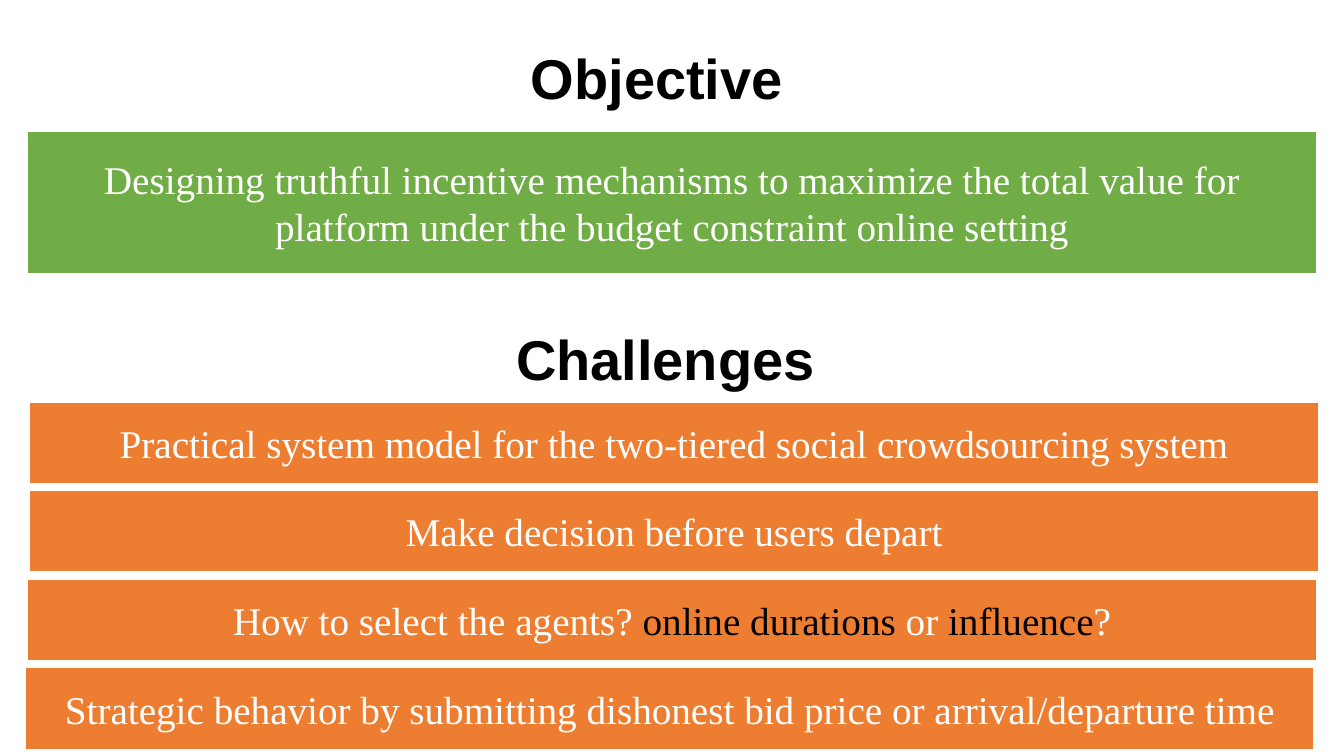
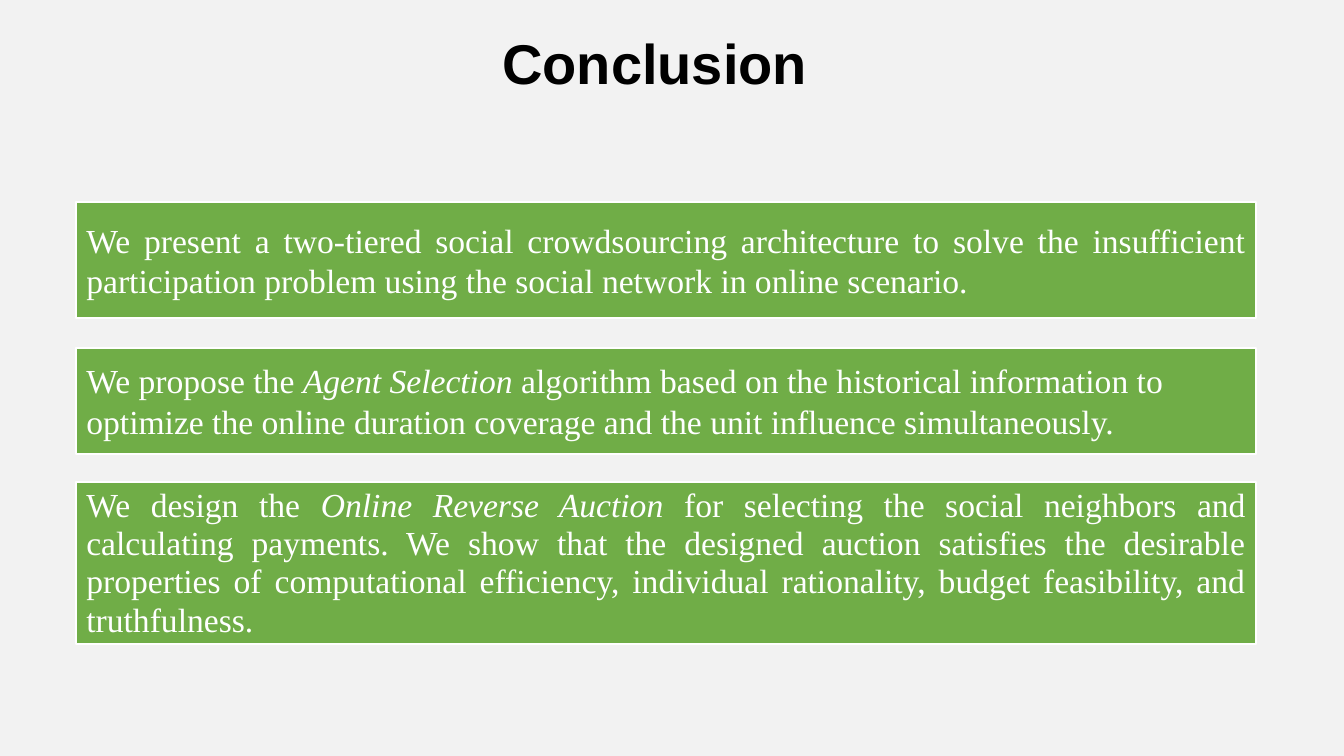
from pptx import Presentation
from pptx.dml.color import RGBColor
from pptx.enum.shapes import MSO_SHAPE
from pptx.enum.text import MSO_ANCHOR, PP_ALIGN
from pptx.util import Inches, Pt

COLS, ROWS = 160, 90
HEX = {"white": "FFFFFF", "black": "000000", "grey": "F2F2F2",
       "green": "70AD47", "orange": "ED7D31"}


def color(name):
    return RGBColor.from_string(HEX[name])


class Deck:
    """Holds the shared style and the current slide; lengths are grid cells."""

    head_font, body_font = "Arial", "Times New Roman"
    head_size = 40

    def __init__(self):
        self.prs = Presentation()
        self.prs.slide_width = Inches(13.333)
        self.prs.slide_height = Inches(7.5)
        self.slide = None

    def page(self, back):
        self.slide = self.prs.slides.add_slide(self.prs.slide_layouts[6])
        fill = self.slide.background.fill
        fill.solid()
        fill.fore_color.rgb = color(back)

    def place(self, left, top, width, height):
        col = self.prs.slide_width / COLS
        row = self.prs.slide_height / ROWS
        return (round(left * col), round(top * row),
                round(width * col), round(height * row))

    def title(self, text, left, top, width):
        box = self.slide.shapes.add_textbox(*self.place(left, top, width, 8.5))
        frame = box.text_frame
        frame.word_wrap = True
        frame.text = text
        para = frame.paragraphs[0]
        para.alignment = PP_ALIGN.CENTER
        font = para.runs[0].font
        font.name, font.size, font.bold = self.head_font, Pt(self.head_size), True
        font.color.rgb = color("black")

    def bar(self, parts, fill, left, top, width, height, size,
            align=PP_ALIGN.CENTER, space=None):
        """Parts are (text, style) pairs; style is "", "dark" or "slant"."""
        box = self.slide.shapes.add_shape(
            MSO_SHAPE.RECTANGLE, *self.place(left, top, width, height))
        box.shadow.inherit = False
        box.fill.solid()
        box.fill.fore_color.rgb = color(fill)
        box.line.color.rgb = color("white")
        box.line.width = Pt(1.5)
        frame = box.text_frame
        frame.word_wrap = True
        frame.vertical_anchor = MSO_ANCHOR.MIDDLE
        para = frame.paragraphs[0]
        para.alignment = align
        if space:
            para.line_spacing = space
        for text, style in parts:
            run = para.add_run()
            run.text = text
            font = run.font
            font.name, font.size = self.body_font, Pt(size)
            font.color.rgb = color("black" if style == "dark" else "white")
            if style == "slant":
                font.italic = True


def goals(deck):
    deck.page("white")

    # Objective
    deck.title("Objective", 39.4, 4.6, 77.6)
    deck.bar([("Designing truthful incentive mechanisms to maximize the total "
               "value for platform under the budget constraint online setting", "")],
             "green", 3.25, 15.6, 153.5, 17, 28)

    # Challenges: equal steps down the slide
    deck.title("Challenges", 40.4, 38, 77.6)
    tasks = [
        (3.5, [("Practical system model for the two-tiered social "
                "crowdsourcing system", "")]),
        (3.5, [("Make decision before users depart", "")]),
        (3.25, [("How to select the agents? ", ""), ("online durations ", "dark"),
                ("or ", ""), ("influence", "dark"), ("?", "")]),
        (3, [("Strategic behavior by submitting dishonest bid price or "
              "arrival/departure time", "")]),
    ]
    for i, (left, parts) in enumerate(tasks):
        deck.bar(parts, "orange", left, 47.8 + i * 10.55, 153.5, 9.8, 28)


def closing(deck):
    deck.page("grey")
    deck.title("Conclusion", 33.6, 2.8, 88.7)

    # Findings: top, height, alignment, line spacing, text
    points = [
        (24, 13.9, PP_ALIGN.JUSTIFY, None, [
            ("We present a two-tiered social crowdsourcing architecture to solve "
             "the insufficient participation problem using the social network in "
             "online scenario.", "")]),
        (41.4, 12.6, PP_ALIGN.LEFT, None, [
            ("We propose the ", ""), ("Agent Selection", "slant"),
            (" algorithm based on the historical information to optimize the "
             "online duration coverage and the unit influence simultaneously.", "")]),
        (57.4, 19.3, PP_ALIGN.JUSTIFY, 0.95, [
            ("We design the ", ""), ("Online Reverse Auction ", "slant"),
            ("for selecting the social neighbors and calculating payments. We show "
             "that the designed auction satisfies the desirable properties of "
             "computational efficiency, individual rationality, budget "
             "feasibility, and truthfulness.", "")]),
    ]
    for top, height, align, space, parts in points:
        deck.bar(parts, "green", 9.1, top, 140.4, height, 24, align, space)


def main():
    deck = Deck()
    goals(deck)
    closing(deck)
    deck.prs.save("out.pptx")


if __name__ == "__main__":
    main()
